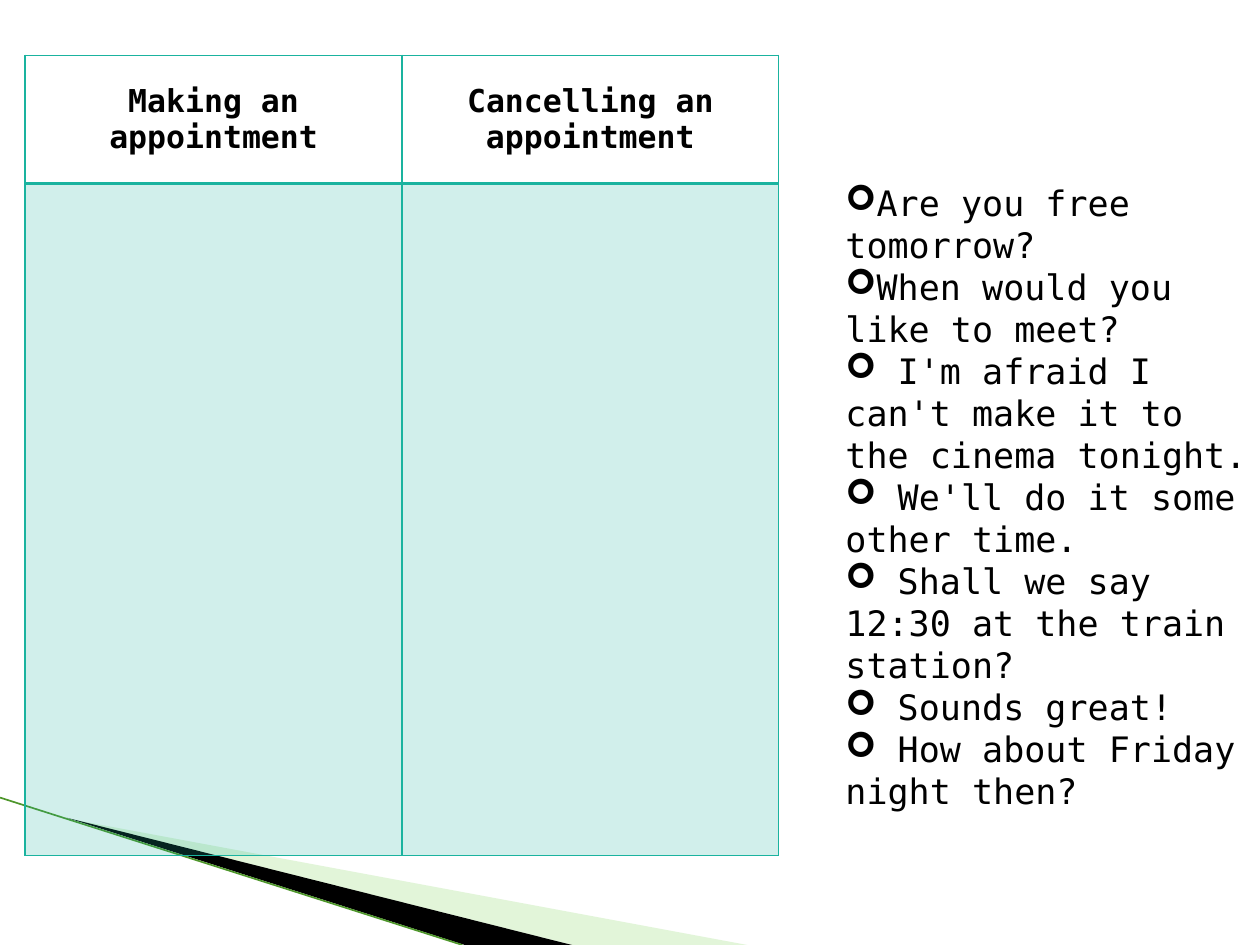
import pptx
import pptx.dml.color
import pptx.enum.shapes
import pptx.enum.text
import pptx.oxml.ns
import pptx.util
from lxml import etree

COLORS = {"text": "000000", "teal": "1AB39F", "pale": "B8E7A1",
          "dark": "000000", "stem": "4E962B"}
FONT = "DejaVu Sans Mono"
COLUMNS, ROWS = 100, 75  # grid over the whole slide

HEADINGS = ["Making an appointment", "Cancelling an appointment"]
PHRASES = [
    "Are you free tomorrow?",
    "When would you like to meet?",
    " I'm afraid I can't make it to the cinema tonight.",
    " We'll do it some other time.",
    " Shall we say 12:30 at the train station?",
    " Sounds great!",
    " How about Friday night then?",
]


def rgb(name):
    return pptx.dml.color.RGBColor.from_string(COLORS[name])


def add_xml(parent, tag, **attributes):
    element = etree.SubElement(parent, pptx.oxml.ns.qn(tag))
    for key, value in attributes.items():
        element.set(key, str(value))
    return element


def paint(fill, color, opacity=100):
    fill.solid()
    fill.fore_color.rgb = rgb(color)
    if opacity < 100:
        # the colour element is reached through the fill's own XML
        color_xml = fill._xPr.find(".//" + pptx.oxml.ns.qn("a:srgbClr"))
        add_xml(color_xml, "a:alpha", val=opacity * 1000)


def write(paragraph, text, size=18, bold=False, color="text", align=None, bullet=None):
    paragraph.text = text
    paragraph.alignment = align
    if bullet:
        properties = paragraph._p.get_or_add_pPr()
        properties.set("marL", "0")
        properties.set("indent", "0")
        paragraph.space_before = pptx.util.Pt(0)
        add_xml(properties, "a:buFont", typeface="Wingdings")
        add_xml(properties, "a:buChar", char=bullet)
    for run in paragraph.runs:
        run.font.name = FONT
        run.font.size = pptx.util.Pt(size)
        run.font.bold = bold
        run.font.color.rgb = rgb(color)


class SlideBuilder:
    def __init__(self, deck, layout):
        self.slide = deck.slides.add_slide(layout)
        self.column = deck.slide_width / COLUMNS
        self.row = deck.slide_height / ROWS

    def at(self, x, y):
        return round(x * self.column), round(y * self.row)

    def ray(self, points, color, opacity=100):
        start, *rest = [self.at(*point) for point in points]
        outline = self.slide.shapes.build_freeform(*start)
        outline.add_line_segments(rest, close=True)
        ray = outline.convert_to_shape()
        ray.shadow.inherit = False
        ray.line.fill.background()
        paint(ray.fill, color, opacity)

    def line(self, start, end, color, width):
        stem = self.slide.shapes.add_connector(
            pptx.enum.shapes.MSO_CONNECTOR.STRAIGHT, *self.at(*start), *self.at(*end))
        stem.line.color.rgb = rgb(color)
        stem.line.width = pptx.util.Pt(width)
        add_xml(stem._element.spPr, "a:effectLst")

    def border(self, cell, **widths):
        properties = cell._tc.get_or_add_tcPr()
        for index, side in enumerate("LRTB"):
            edge = add_xml(properties, f"a:ln{side}",
                           w=pptx.util.Pt(widths.get(side, 1)))
            add_xml(add_xml(edge, "a:solidFill"), "a:srgbClr", val=COLORS["teal"])
            properties.insert(index, edge)

    def sorting_table(self, left, top, width, heights, headings):
        table = self.slide.shapes.add_table(
            len(heights), len(headings), *self.at(left, top),
            *self.at(width, sum(heights))).table
        table.first_row = table.horz_banding = False
        for row, height in zip(table.rows, heights):
            row.height = round(height * self.row)
        for index, heading in enumerate(headings):
            header, answers = table.cell(0, index), table.cell(1, index)
            header.vertical_anchor = pptx.enum.text.MSO_ANCHOR.MIDDLE
            header.fill.background()
            write(header.text_frame.paragraphs[0], heading, bold=True,
                  align=pptx.enum.text.PP_ALIGN.CENTER)
            paint(answers.fill, "teal", opacity=20)
            self.border(header, B=2)
            self.border(answers, T=2)

    def bullets(self, left, top, width, height, items):
        body = self.slide.placeholders[1]
        body.left, body.top = self.at(left, top)
        body.width, body.height = self.at(width, height)
        frame = body.text_frame
        frame.word_wrap = True
        frame.auto_size = pptx.enum.text.MSO_AUTO_SIZE.SHAPE_TO_FIT_TEXT
        frame.vertical_anchor = pptx.enum.text.MSO_ANCHOR.TOP
        for index, item in enumerate(items):
            paragraph = frame.add_paragraph() if index else frame.paragraphs[0]
            write(paragraph, item, size=20, bullet="➢")

    def remove_title(self):
        title = self.slide.shapes.title._element
        title.getparent().remove(title)


def main():
    deck = pptx.Presentation()
    deck.slide_width = pptx.util.Inches(10)
    deck.slide_height = pptx.util.Inches(7.5)
    page = SlideBuilder(deck, deck.slide_layouts[1])
    page.remove_title()

    # Rays in the lower left corner
    page.ray([(5.5, 65), (59.3, 75), (45.4, 75)], "pale", opacity=40)
    page.ray([(5.3, 64.9), (45.4, 75), (36.9, 75)], "dark")
    page.line((0, 63.3), (36.7, 75), "stem", 0.95)

    # Table for sorting the phrases
    page.sorting_table(2, 4.4, 59.8, [10.2, 53.3], HEADINGS)

    # Phrases to sort
    page.bullets(66.1, 13.9, 33.9, 54.2, PHRASES)

    deck.save("out.pptx")


if __name__ == "__main__":
    main()
